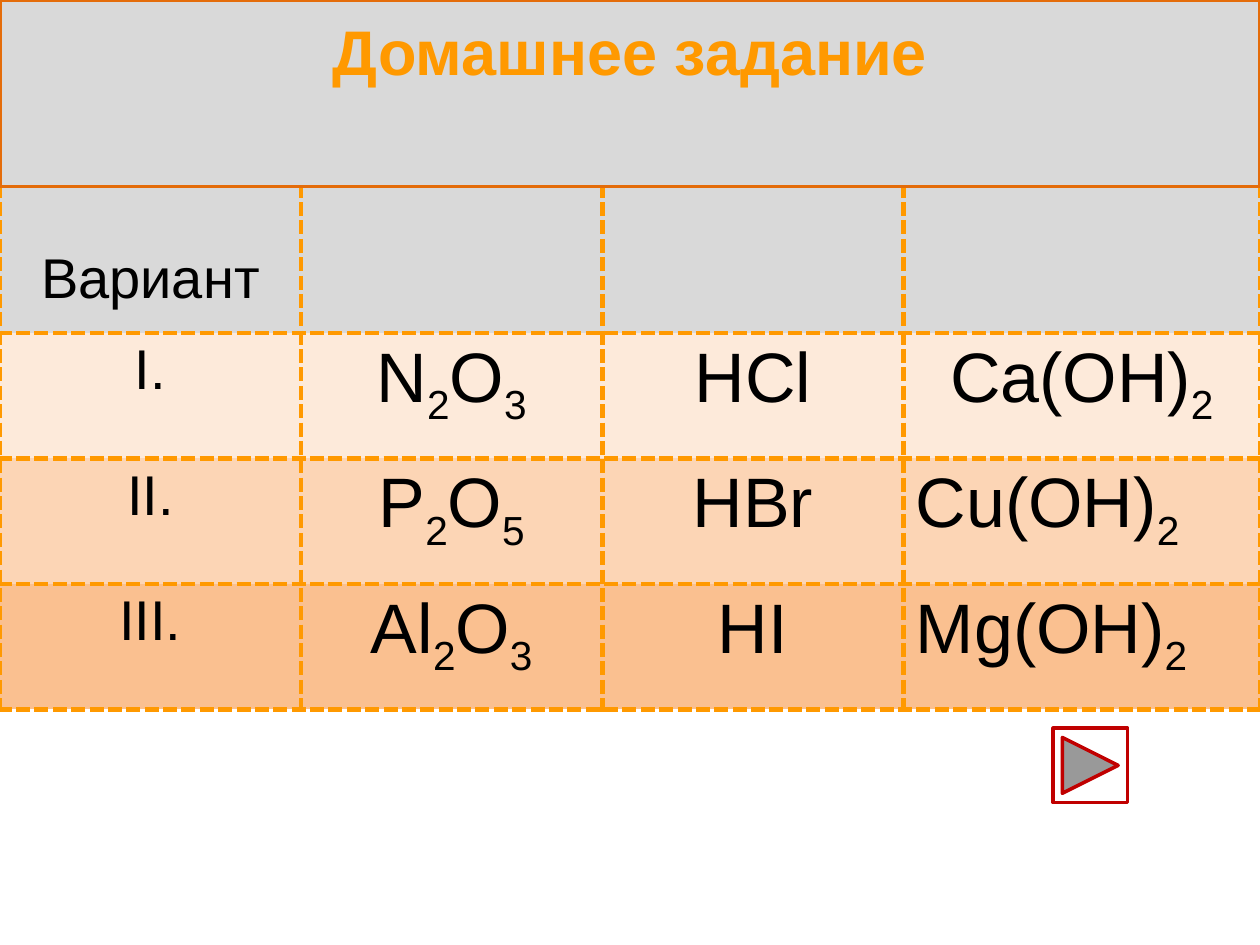
from itertools import groupby

from lxml.etree import SubElement
from pptx import Presentation
from pptx.dml.color import RGBColor
from pptx.enum.shapes import MSO_SHAPE
from pptx.enum.text import MSO_ANCHOR, MSO_AUTO_SIZE, PP_ALIGN
from pptx.oxml.ns import qn
from pptx.util import Cm, Pt

ORANGE = RGBColor(0xFF, 0x99, 0x00)
DARK_ORANGE = RGBColor(0xE4, 0x6C, 0x0A)
RED = RGBColor(0xC0, 0x00, 0x00)
GRAY = RGBColor(0xD9, 0xD9, 0xD9)
WHITE = RGBColor(0xFF, 0xFF, 0xFF)
BLACK = RGBColor(0x00, 0x00, 0x00)
ROW_FILLS = [GRAY, RGBColor(0xFD, 0xEA, 0xDA), RGBColor(0xFC, 0xD5, 0xB5), RGBColor(0xFA, 0xC0, 0x90)]

TITLE_FONT = {"name": "Arial", "size": Pt(36), "bold": True}
LABEL_FONT = {"name": "Arial", "size": Pt(32)}
FORMULA_FONT = {"name": "Arial", "size": Pt(40)}

ROWS = [
    ["Вариант", "", "", ""],
    ["I.", "N2O3", "HCl", "Ca(OH)2"],
    ["II.", "P2O5", "HBr", "Cu(OH)2"],
    ["III.", "Al2O3", "HI", "Mg(OH)2"],
]
LEFT_ALIGNED = {"Cu(OH)2", "Mg(OH)2"}


def format_font(font, values, color):
    """Apply a dict of font values and a colour."""
    for name, value in values.items():
        setattr(font, name, value)
    font.color.rgb = color


def add_box(slide, preset, box, fill, line):
    """Add a filled preset shape with a two-point outline."""
    shape = slide.shapes.add_shape(preset, *box)
    shape.shadow.inherit = False
    shape.fill.solid()
    shape.fill.fore_color.rgb = fill
    shape.line.color.rgb = line
    shape.line.width = Pt(2)


def set_borders(cell):
    """Give a cell dashed orange borders on all sides."""
    properties = cell._tc.get_or_add_tcPr()
    for side in ("lnL", "lnR", "lnT", "lnB"):
        line = SubElement(properties, qn(f"a:{side}"), w=str(Pt(3)))
        fill = SubElement(line, qn("a:solidFill"))
        SubElement(fill, qn("a:srgbClr"), val=str(ORANGE))
        SubElement(line, qn("a:prstDash"), val="dash")


def write_formula(paragraph, formula):
    """Write a chemical formula with its digits as subscripts."""
    for is_index, letters in groupby(formula, str.isdigit):
        run = paragraph.add_run()
        run.text = "".join(letters)
        format_font(run.font, FORMULA_FONT, BLACK)
        if is_index:
            run._r.get_or_add_rPr().set("baseline", "-25000")


def write_label(paragraph, label):
    """Write a label of the first column."""
    run = paragraph.add_run()
    run.text = label
    format_font(run.font, LABEL_FONT, BLACK)


def add_variants(slide, left, top, width, height):
    """Add the table of homework variants."""
    table = slide.shapes.add_table(len(ROWS), len(ROWS[0]), left, top, width, height).table
    table.first_row = table.horz_banding = False
    column_width, header_height = Cm(6.07), Cm(3.33)
    for column in table.columns:
        column.width = column_width
    table.columns[3].width = width - 3 * column_width
    for row in table.rows:
        row.height = (height - header_height) // 3
    table.rows[0].height = header_height

    for row_index, (texts, fill) in enumerate(zip(ROWS, ROW_FILLS)):
        for column_index, text in enumerate(texts):
            cell = table.cell(row_index, column_index)
            set_borders(cell)
            cell.fill.solid()
            cell.fill.fore_color.rgb = fill
            paragraph = cell.text_frame.paragraphs[0]
            paragraph.alignment = PP_ALIGN.LEFT if text in LEFT_ALIGNED else PP_ALIGN.CENTER
            if text:
                write = write_formula if column_index else write_label
                write(paragraph, text)
    header = table.cell(0, 0)
    header.vertical_anchor = MSO_ANCHOR.BOTTOM
    header.margin_bottom = Cm(0.45)


def add_heading(slide, left, top, width, height):
    """Add the gray band and place the title on it."""
    add_box(slide, MSO_SHAPE.RECTANGLE, (left, top, width, height), GRAY, DARK_ORANGE)
    title = slide.shapes.title
    slide.shapes.element.append(title.element)
    position = {"left": left, "top": top, "width": width, "height": Cm(2.57)}
    for name, value in position.items():
        setattr(title, name, value)
    frame = title.text_frame
    frame.text = "Домашнее задание"
    frame.auto_size = MSO_AUTO_SIZE.NONE
    frame.vertical_anchor = MSO_ANCHOR.TOP
    frame.margin_top = Cm(0.25)
    paragraph = frame.paragraphs[0]
    paragraph.alignment = PP_ALIGN.CENTER
    format_font(paragraph.runs[0].font, TITLE_FONT, ORANGE)


def main():
    """Build and save the homework slide."""
    presentation = Presentation()
    presentation.slide_width = Cm(25.4)
    presentation.slide_height = Cm(19.05)
    slide = presentation.slides.add_slide(presentation.slide_layouts.get_by_name("Title Only"))
    width = presentation.slide_width
    add_variants(slide, 0, Cm(3.38), width, Cm(10.92))
    add_heading(slide, 0, 0, width, Cm(3.76))
    button_box = (Cm(21.23), Cm(14.68), Cm(1.5), Cm(1.5))
    add_box(slide, MSO_SHAPE.ACTION_BUTTON_FORWARD_OR_NEXT, button_box, WHITE, RED)
    presentation.save("out.pptx")


if __name__ == "__main__":
    main()
